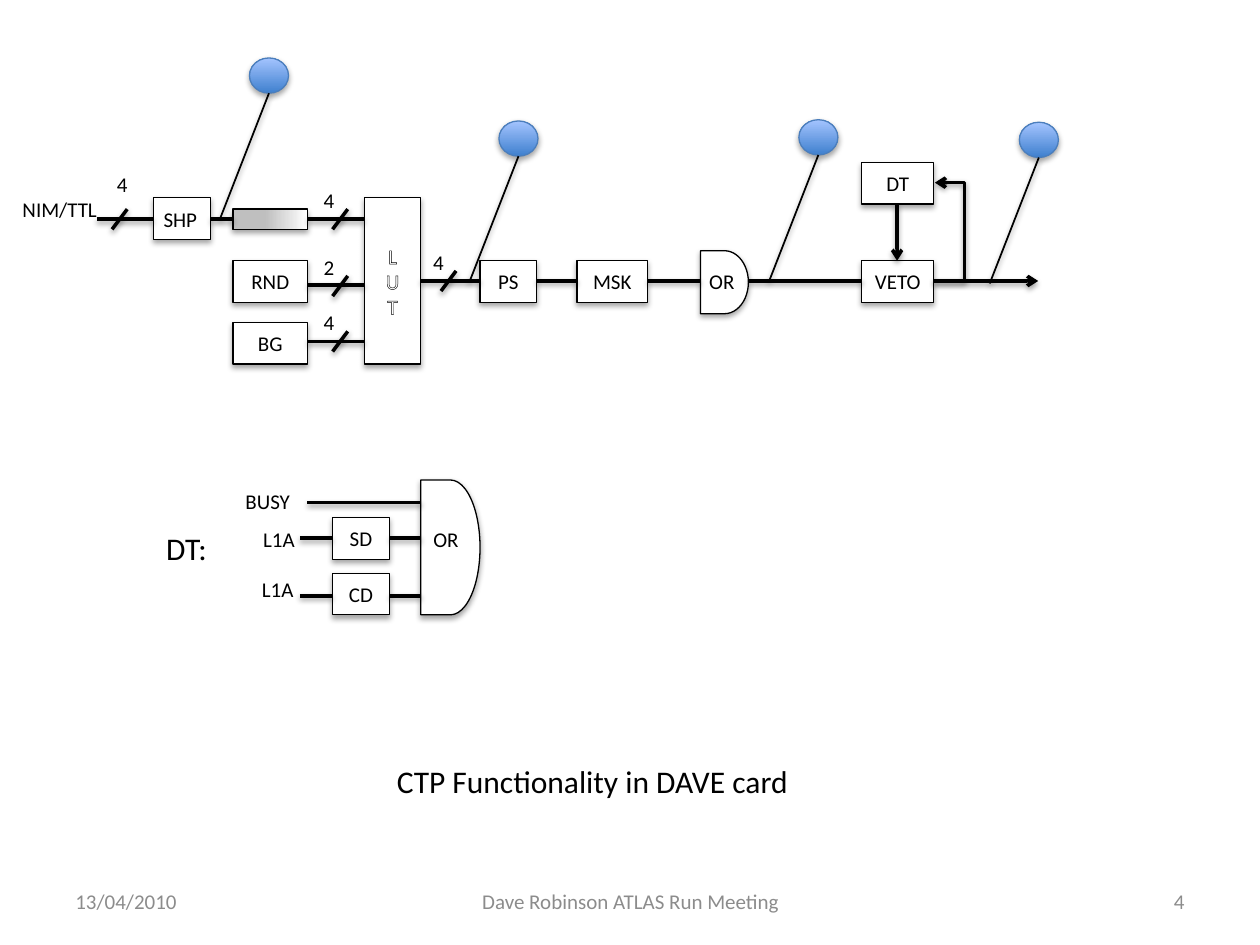
"""Build the trigger-logic block diagram slide for the DAVE card."""
from lxml import etree
from pptx import Presentation
from pptx import util as u
from pptx.dml.color import RGBColor
from pptx.enum import shapes, text
from pptx.oxml import parse_xml
from pptx.oxml.ns import nsdecls, qn

THEME = {
    "font": "Calibri", "ink": "000000", "paper": "FFFFFF", "muted": "8C8C8C",
    "bubble_line": "4B7EBC", "bubble_fill": [(0, "3F80CE"), (1, "A4C4FF")],
    "delay_fill": [(0.43, "BFBFBF"), (1, "FFFFFF")],
    "small": 12, "large": 18, "outline": 0.75, "wire": 2, "stem": 1,
}
RECT = shapes.MSO_SHAPE.RECTANGLE
GATE = shapes.MSO_SHAPE.FLOWCHART_DELAY
LEFT, CENTER, RIGHT = text.PP_ALIGN.LEFT, text.PP_ALIGN.CENTER, text.PP_ALIGN.RIGHT

TITLE = ("CTP Functionality in DAVE card", (3.05, 6, 3.34, 0.4))
BOX_HEIGHT = 0.33
BOXES = [
    ("", 1.22, 1.57, 0.45), ("RND", 1.85, 2.07, 0.59), ("BG", 1.85, 2.56, 0.59),
    ("PS", 3.81, 2.07, 0.45), ("MSK", 4.58, 2.07, 0.56), ("VETO", 6.84, 2.07, 0.57),
    ("DT", 6.84, 1.29, 0.57), ("SD", 2.64, 4.11, 0.45), ("CD", 2.64, 4.55, 0.45),
]
DELAY_LINE = (1.85, 1.66, 0.59, 0.16)
LOOKUP = ("L\nU\nT", (2.89, 1.57, 0.45, 1.32))
GATES = [(5.56, 1.99, 0.38, 0.5), (3.34, 3.81, 0.47, 1.07)]
WIRES = {
    1.74: [(0.77, 1.22), (1.67, 1.85), (2.44, 2.89)],
    2.26: [(2.44, 2.89)],
    2.71: [(2.44, 2.89)],
    2.23: [(3.34, 3.81), (4.26, 4.58), (5.14, 5.56), (5.94, 6.84)],
    3.99: [(2.44, 3.34)],
    4.27: [(2.38, 2.64), (3.09, 3.34)],
    4.73: [(2.38, 2.64), (3.09, 3.34)],
}
ARROWS = [((7.12, 1.62), (7.12, 2.07)), ((7.41, 2.23), (8.24, 2.23))]
FEEDBACK = ((7.41, 2.23), (7.42, 1.45))
FEEDBACK_REACH = 0.25
BUS_WIDTHS = [
    ("4", (0.83, 1.31), (0.89, 1.66)), ("4", (2.47, 1.44), (2.64, 1.66)),
    ("2", (2.47, 1.97), (2.64, 2.19)), ("4", (2.47, 2.41), (2.64, 2.63)),
    ("4", (3.34, 1.93), (3.5, 2.15)),
]
SLASH = (0.12, 0.16)
LABELS = [
    ("NIM/TTL", 0.08, 1.51, 0.81), ("SHP", 1.2, 1.59, 0.47), ("OR", 5.53, 2.08, 0.41),
    ("OR", 3.34, 4.13, 0.41), ("BUSY", 1.85, 3.83, 0.57),
    ("L1A", 1.99, 4.13, 0.45), ("L1A", 1.98, 4.53, 0.45),
]
SECTION = ("DT:", (1.22, 4.15, 0.53, 0.4))
BUBBLES = [(1.98, 0.46), (3.96, 0.96), (6.34, 0.95), (8.09, 0.97)]
BUBBLE_SIZE = (0.31, 0.28)
STEM = (-0.39, 1.0)
FOOTER = [
    ("13/04/2010", 0.5, 2.33, LEFT),
    ("Dave Robinson ATLAS Run Meeting", 3.42, 3.17, CENTER),
    ("4", 7.17, 2.33, RIGHT),
]


def rgb(name):
    return RGBColor.from_string(THEME.get(name, name))


def inches(values):
    return [u.Inches(value) for value in values]


def write(part, words, size="small", color="ink", align=LEFT, wrap=False,
          anchor=text.MSO_ANCHOR.TOP, fit=text.MSO_AUTO_SIZE.NONE, outlined=False):
    frame = part.text_frame
    frame.text = words
    frame.word_wrap, frame.auto_size, frame.vertical_anchor = wrap, fit, anchor
    for paragraph in frame.paragraphs:
        paragraph.alignment = align
        for run in paragraph.runs:
            run.font.name, run.font.size = THEME["font"], u.Pt(THEME[size])
            run.font.color.rgb = rgb(color)
            if outlined:
                run.font._element.insert(0, parse_xml(
                    f'<a:ln {nsdecls("a")} w="{u.Pt(THEME["outline"])}"><a:solidFill>'
                    f'<a:srgbClr val="{THEME["ink"]}"/></a:solidFill></a:ln>'))


def add_shadow(part, distance, alpha):
    part._element.spPr.append(parse_xml(
        f'<a:effectLst {nsdecls("a")}><a:outerShdw blurRad="40000" dist="{distance}" '
        f'dir="5400000" rotWithShape="0"><a:srgbClr val="{THEME["ink"]}">'
        f'<a:alpha val="{alpha}"/></a:srgbClr></a:outerShdw></a:effectLst>'))


def add_block(slide, kind, place, gradient=None, angle=0, line="ink"):
    block = slide.shapes.add_shape(kind, *inches(place))
    if gradient:
        block.fill.gradient()
        block.fill.gradient_angle = angle
        for stop, (position, color) in zip(block.fill.gradient_stops, gradient):
            stop.position, stop.color.rgb = position, rgb(color)
    else:
        block.fill.solid()
        block.fill.fore_color.rgb = rgb("paper")
    block.line.color.rgb = rgb(line)
    block.line.width = u.Pt(THEME["outline"])
    add_shadow(block, 23000, 35000)
    return block


def add_wire(slide, start, end, weight="wire", arrow=False,
             kind=shapes.MSO_CONNECTOR.STRAIGHT):
    wire = slide.shapes.add_connector(kind, *inches(start + end))
    wire.line.color.rgb = rgb("ink")
    wire.line.width = u.Pt(THEME[weight])
    if arrow:
        etree.SubElement(wire.line._get_or_add_ln(), qn("a:tailEnd"), type="arrow")
    add_shadow(wire, 20000, 38000)
    return wire


def add_label(slide, words, place, **style):
    write(slide.shapes.add_textbox(*inches(place)), words, **style)


def add_blocks(slide):
    middle = {"align": CENTER, "anchor": text.MSO_ANCHOR.MIDDLE}
    for words, left, top, width in BOXES:
        box = add_block(slide, RECT, (left, top, width, BOX_HEIGHT))
        if words:
            write(box, words, **middle)
    add_block(slide, RECT, DELAY_LINE, THEME["delay_fill"])
    words, place = LOOKUP
    write(add_block(slide, RECT, place), words, color="paper", outlined=True, **middle)
    for place in GATES:
        add_block(slide, GATE, place)


def add_wires(slide):
    for y, spans in WIRES.items():
        for start, end in spans:
            add_wire(slide, (start, y), (end, y))
    for start, end in ARROWS:
        add_wire(slide, start, end, arrow=True)
    start, end = FEEDBACK
    feedback = add_wire(slide, start, end, arrow=True, kind=shapes.MSO_CONNECTOR.ELBOW)
    reach = round(FEEDBACK_REACH / (end[0] - start[0]) * 100000)
    guides = feedback._element.spPr.find(qn("a:prstGeom")).get_or_add_avLst()
    etree.SubElement(guides, qn("a:gd"), name="adj1", fmla=f"val {reach}")


def add_bubbles(slide):
    width, height = BUBBLE_SIZE
    for left, top in BUBBLES:
        add_block(slide, shapes.MSO_SHAPE.OVAL, (left, top, width, height),
                  THEME["bubble_fill"], angle=90, line="bubble_line")
        x, y = left + width / 2, top + height
        add_wire(slide, (x, y), (x + STEM[0], y + STEM[1]), weight="stem")


def add_labels(slide):
    grow = {"fit": text.MSO_AUTO_SIZE.SHAPE_TO_FIT_TEXT}
    for words, (left, top), (x, y) in BUS_WIDTHS:
        add_wire(slide, (x + SLASH[0], y), (x, y + SLASH[1]))
        add_label(slide, words, (left, top, 0.33, 0.3), wrap=True, **grow)
    for words, left, top, width in LABELS:
        add_label(slide, words, (left, top, width, 0.3), **grow)
    add_label(slide, *SECTION, size="large", **grow)
    for words, left, width, align in FOOTER:
        add_label(slide, words, (left, 6.95, width, 0.4), color="muted", align=align,
                  wrap=True, anchor=text.MSO_ANCHOR.MIDDLE)


def main():
    deck = Presentation()
    deck.slide_width, deck.slide_height = inches((10, 7.5))
    slide = deck.slides.add_slide(deck.slide_layouts[5])
    title = slide.shapes.title
    words, place = TITLE
    title.left, title.top, title.width, title.height = inches(place)
    write(title, words, size="large")
    add_blocks(slide)
    add_wires(slide)
    add_labels(slide)
    add_bubbles(slide)
    deck.save("out.pptx")


if __name__ == "__main__":
    main()
